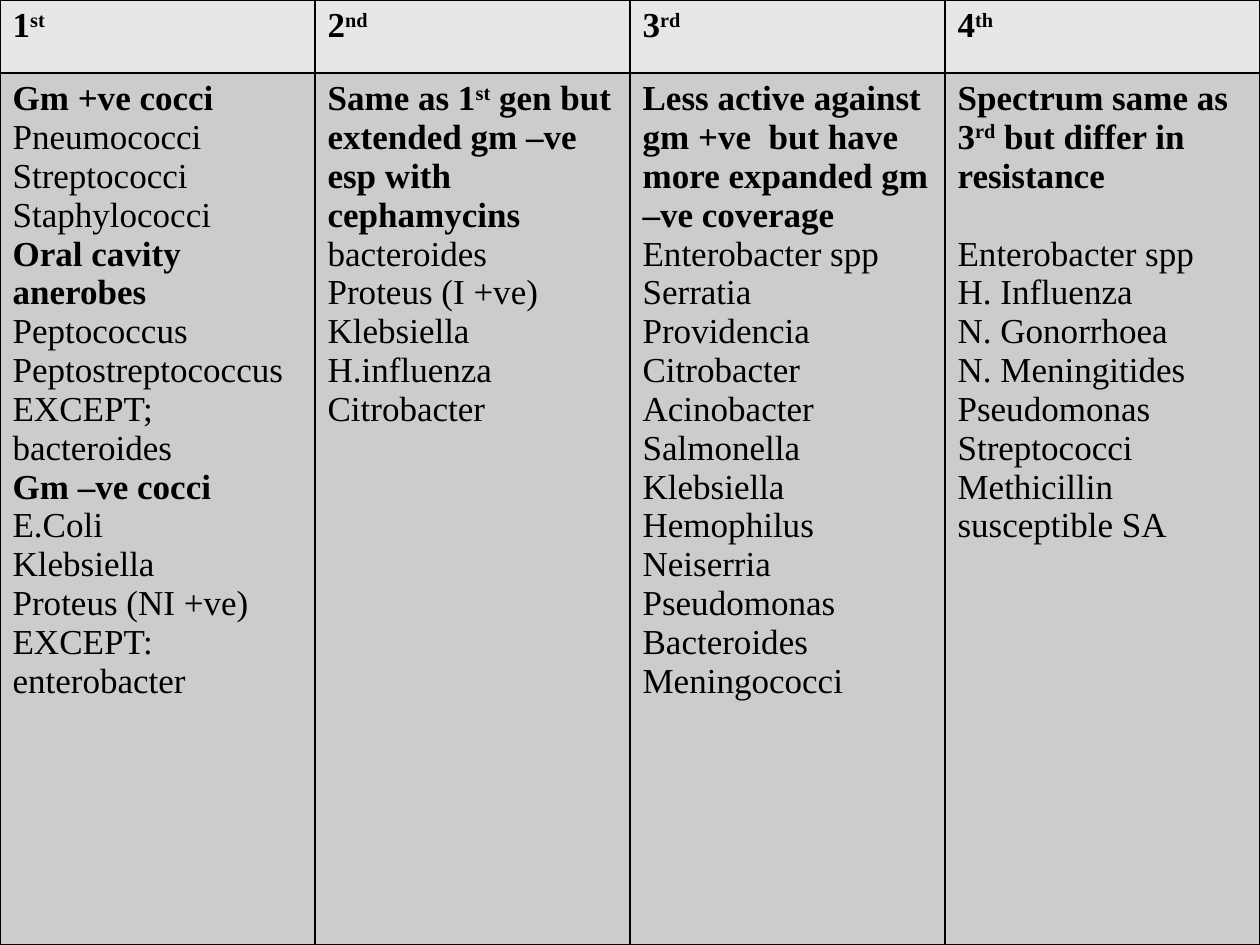
from lxml import etree
from pptx import Presentation
from pptx.dml.color import RGBColor
from pptx.oxml.ns import qn
from pptx.util import Inches, Pt

BLACK = RGBColor(0x00, 0x00, 0x00)
HEADER_GREY = RGBColor(0xE7, 0xE7, 0xE7)
BODY_GREY = RGBColor(0xCC, 0xCC, 0xCC)
FONT_NAME = "Times New Roman"
FONT_SIZE = Pt(20)
LINE_HEIGHT = Pt(22.2)
HEADER_HEIGHT = Inches(0.58)
BORDER_WIDTH = Pt(1)

GENERATIONS = [
    (["1", "st"], [
        (True, ["Gm +ve cocci"]),
        (False, ["Pneumococci"]),
        (False, ["Streptococci"]),
        (False, ["Staphylococci"]),
        (True, ["Oral cavity anerobes"]),
        (False, ["Peptococcus"]),
        (False, ["Peptostreptococcus"]),
        (False, ["EXCEPT; bacteroides"]),
        (True, ["Gm –ve cocci"]),
        (False, ["E.Coli"]),
        (False, ["Klebsiella"]),
        (False, ["Proteus (NI +ve)"]),
        (False, ["EXCEPT: enterobacter"]),
    ]),
    (["2", "nd"], [
        (True, ["Same as 1", "st", " gen but extended gm –ve esp with cephamycins"]),
        (False, ["bacteroides"]),
        (False, ["Proteus (I +ve)"]),
        (False, ["Klebsiella"]),
        (False, ["H.influenza"]),
        (False, ["Citrobacter"]),
    ]),
    (["3", "rd"], [
        (True, ["Less active against gm +ve  but have more expanded gm –ve coverage"]),
        (False, ["Enterobacter spp"]),
        (False, ["Serratia"]),
        (False, ["Providencia"]),
        (False, ["Citrobacter"]),
        (False, ["Acinobacter"]),
        (False, ["Salmonella"]),
        (False, ["Klebsiella"]),
        (False, ["Hemophilus"]),
        (False, ["Neiserria"]),
        (False, ["Pseudomonas"]),
        (False, ["Bacteroides"]),
        (False, ["Meningococci"]),
    ]),
    (["4", "th"], [
        (True, ["Spectrum same as 3", "rd", " but differ in resistance"]),
        (False, ["Enterobacter spp"]),
        (False, ["H. Influenza"]),
        (False, ["N. Gonorrhoea"]),
        (False, ["N. Meningitides"]),
        (False, ["Pseudomonas"]),
        (False, ["Streptococci"]),
        (False, ["Methicillin susceptible SA"]),
    ]),
]


def style_cell(cell, color):
    properties = cell._tc.get_or_add_tcPr()
    for side in ("a:lnL", "a:lnR", "a:lnT", "a:lnB"):
        line = etree.SubElement(properties, qn(side), w=str(BORDER_WIDTH))
        fill = etree.SubElement(line, qn("a:solidFill"))
        etree.SubElement(fill, qn("a:srgbClr"), val=str(BLACK))
    cell.fill.solid()
    cell.fill.fore_color.rgb = color


def write_paragraph(paragraph, parts, bold):
    font = paragraph.font
    font.name = FONT_NAME
    font.size = FONT_SIZE
    font.bold = bold
    font.color.rgb = BLACK
    for index, text in enumerate(parts):
        run = paragraph.add_run()
        run.text = text
        if index % 2:
            run._r.get_or_add_rPr().set("baseline", "30000")


presentation = Presentation()
presentation.slide_width = Inches(10)
presentation.slide_height = Inches(7.5)
width, height = presentation.slide_width, presentation.slide_height
slide = presentation.slides.add_slide(presentation.slide_layouts[6])
slide.background.fill.solid()
slide.background.fill.fore_color.rgb = BLACK

table = slide.shapes.add_table(2, len(GENERATIONS), 0, 0, width, height).table
table.first_row = False
table.horz_banding = False
table.rows[0].height = HEADER_HEIGHT
table.rows[1].height = height - HEADER_HEIGHT

for column, (ordinal, entries) in enumerate(GENERATIONS):
    header, body = table.cell(0, column), table.cell(1, column)
    style_cell(header, HEADER_GREY)
    style_cell(body, BODY_GREY)
    write_paragraph(header.text_frame.paragraphs[0], ordinal, True)
    frame = body.text_frame
    for index, (bold, parts) in enumerate(entries):
        paragraph = frame.add_paragraph() if index else frame.paragraphs[0]
        write_paragraph(paragraph, parts, bold)

fourth_body = table.cell(1, 3).text_frame
fourth_body.paragraphs[1].space_before = LINE_HEIGHT

presentation.save("out.pptx")
